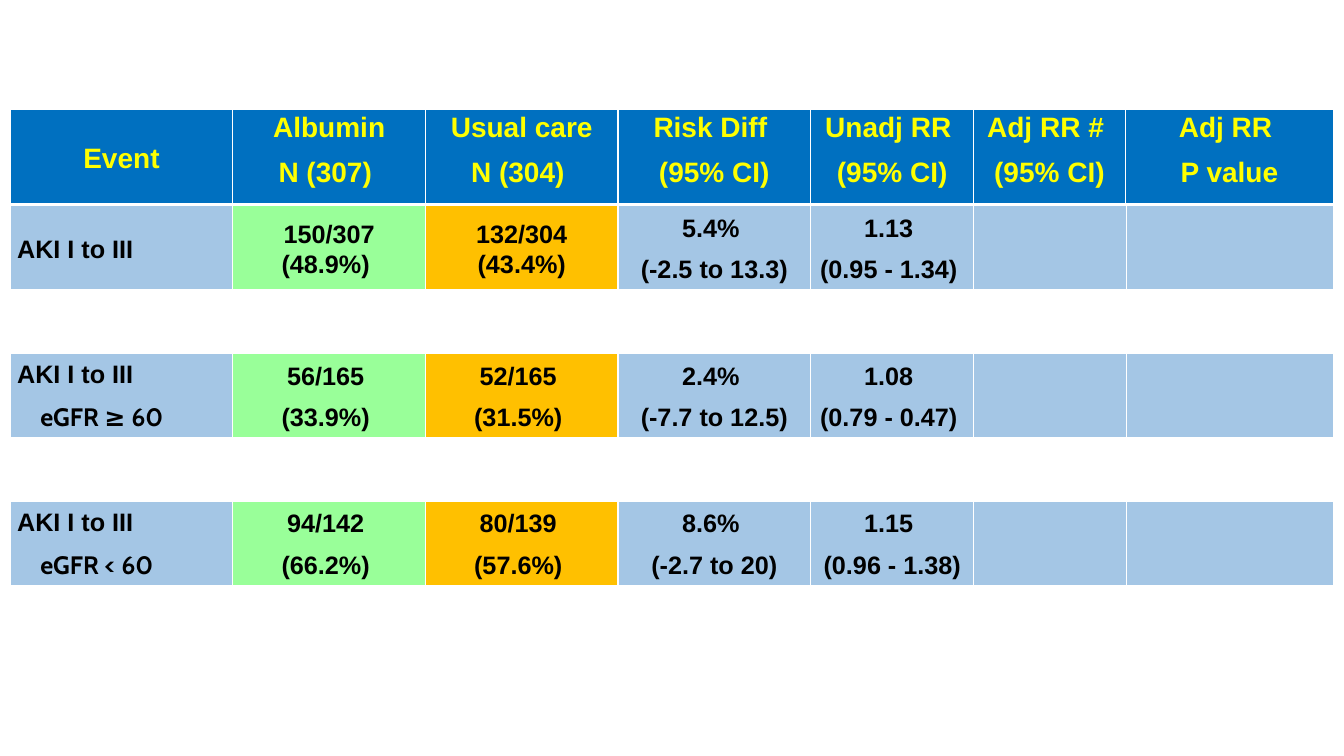
from dataclasses import dataclass

from lxml import etree
from pptx import Presentation
from pptx.dml.color import RGBColor
from pptx.enum.text import MSO_ANCHOR, PP_ALIGN
from pptx.oxml.ns import qn
from pptx.util import Inches, Pt

LEFT, CENTER = PP_ALIGN.LEFT, PP_ALIGN.CENTER
TOP, MIDDLE = MSO_ANCHOR.TOP, MSO_ANCHOR.MIDDLE


@dataclass(frozen=True)
class Theme:
    font: str = "Arial"
    subgroup_font: str = "Cabin"
    header_size: int = 20
    body_size: int = 18
    header_fill: str = "0070C0"
    header_text: str = "FFFF00"
    body_fill: str = "A4C6E5"
    body_text: str = "000000"
    albumin_fill: str = "99FF99"
    usual_fill: str = "FFC000"
    border: str = "FFFFFF"


class SlideBuilder:
    def __init__(self, slide, theme):
        self.slide = slide
        self.theme = theme

    def table(self, top, height, widths):
        shape = self.slide.shapes.add_table(
            1, len(widths), Inches(0.1), Inches(top),
            Inches(sum(widths)), Inches(height))
        table = shape.table
        table.first_row = False
        table.horz_banding = False
        table.rows[0].height = Inches(height)
        for column, width in zip(table.columns, widths):
            column.width = Inches(width)
        return table.rows[0].cells

    def borders(self, cell):
        tc_pr = cell._tc.get_or_add_tcPr()
        for side, width in (("L", 1), ("R", 1), ("T", 1), ("B", 3)):
            ln = etree.SubElement(tc_pr, qn(f"a:ln{side}"), w=str(Pt(width)))
            fill = etree.SubElement(ln, qn("a:solidFill"))
            etree.SubElement(fill, qn("a:srgbClr"), val=self.theme.border)

    def paragraph(self, p, text, size, color, align, font, indent):
        p.alignment = align
        p.line_spacing = 1.07
        p.space_after = Pt(8)
        if indent:
            p._p.get_or_add_pPr().set("marL", str(Inches(indent)))
        if not text:
            p.font.size = Pt(size)
            return
        r = p.add_run()
        r.text = text
        r.font.name = font
        r.font.size = Pt(size)
        r.font.bold = True
        r.font.color.rgb = RGBColor.from_string(color)

    def cell(self, cell, lines, fill, size, color, align=CENTER,
             anchor=MIDDLE, subgroup=False):
        self.borders(cell)
        cell.fill.solid()
        cell.fill.fore_color.rgb = RGBColor.from_string(fill)
        cell.margin_left = cell.margin_right = Inches(0.07)
        cell.margin_top = cell.margin_bottom = 0
        cell.vertical_anchor = anchor
        tf = cell.text_frame
        for i, text in enumerate(lines):
            p = tf.paragraphs[0] if i == 0 else tf.add_paragraph()
            nested = subgroup and i > 0
            font = self.theme.subgroup_font if nested else self.theme.font
            self.paragraph(p, text, size, color, align, font,
                           0.23 if nested else 0)

    def header(self, top, height, widths, labels):
        t = self.theme
        for i, (cell, lines) in enumerate(
                zip(self.table(top, height, widths), labels)):
            self.cell(cell, lines, t.header_fill, t.header_size,
                      t.header_text, anchor=TOP if i else MIDDLE)

    def event(self, top, height, widths, values):
        t = self.theme
        fills = {1: t.albumin_fill, 2: t.usual_fill}
        for i, (cell, lines) in enumerate(
                zip(self.table(top, height, widths), values)):
            self.cell(cell, lines, fills.get(i, t.body_fill), t.body_size,
                      t.body_text, align=CENTER if i else LEFT,
                      subgroup=i == 0)


HEADER_WIDTHS = [2.21, 1.91, 1.91, 1.91, 1.62, 1.5, 2.07]
EVENT_WIDTHS = HEADER_WIDTHS[:5] + [1.51, 2.06]

LABELS = [
    ["Event"],
    ["Albumin", "N (307) "],
    ["Usual care", "N (304) "],
    ["Risk Diff ", "(95% CI)"],
    ["Unadj RR ", "(95% CI)"],
    ["Adj RR # ", "(95% CI)"],
    ["Adj RR ", "P value"],
]

EVENTS = [
    [["AKI I to III"], ["150/307 (48.9%) "], ["132/304 (43.4%)"],
     ["5.4% ", "(-2.5 to 13.3)"], ["1.13 ", "(0.95 - 1.34) "], [""], [""]],
    [["AKI I to III", "eGFR ≥ 60"], ["56/165 ", "(33.9%) "],
     ["52/165 ", "(31.5%) "], ["2.4% ", "(-7.7 to 12.5)"],
     ["1.08 ", "(0.79 - 0.47) "], [""], [""]],
    [["AKI I to III", "eGFR < 60"], ["94/142 ", "(66.2%) "],
     ["80/139 ", "(57.6%) "], ["8.6% ", "(-2.7 to 20)"],
     ["1.15 ", "(0.96 - 1.38)"], [""], [""]],
]


def main():
    prs = Presentation()
    prs.slide_width = Inches(13.33)
    prs.slide_height = Inches(7.5)
    s = SlideBuilder(prs.slides.add_slide(prs.slide_layouts[6]), Theme())
    s.header(1.09, 0.94, HEADER_WIDTHS, LABELS)
    for i, values in enumerate(EVENTS):
        s.event(2.04 + 1.465 * i, 0.85, EVENT_WIDTHS, values)
    prs.save("out.pptx")


if __name__ == "__main__":
    main()
